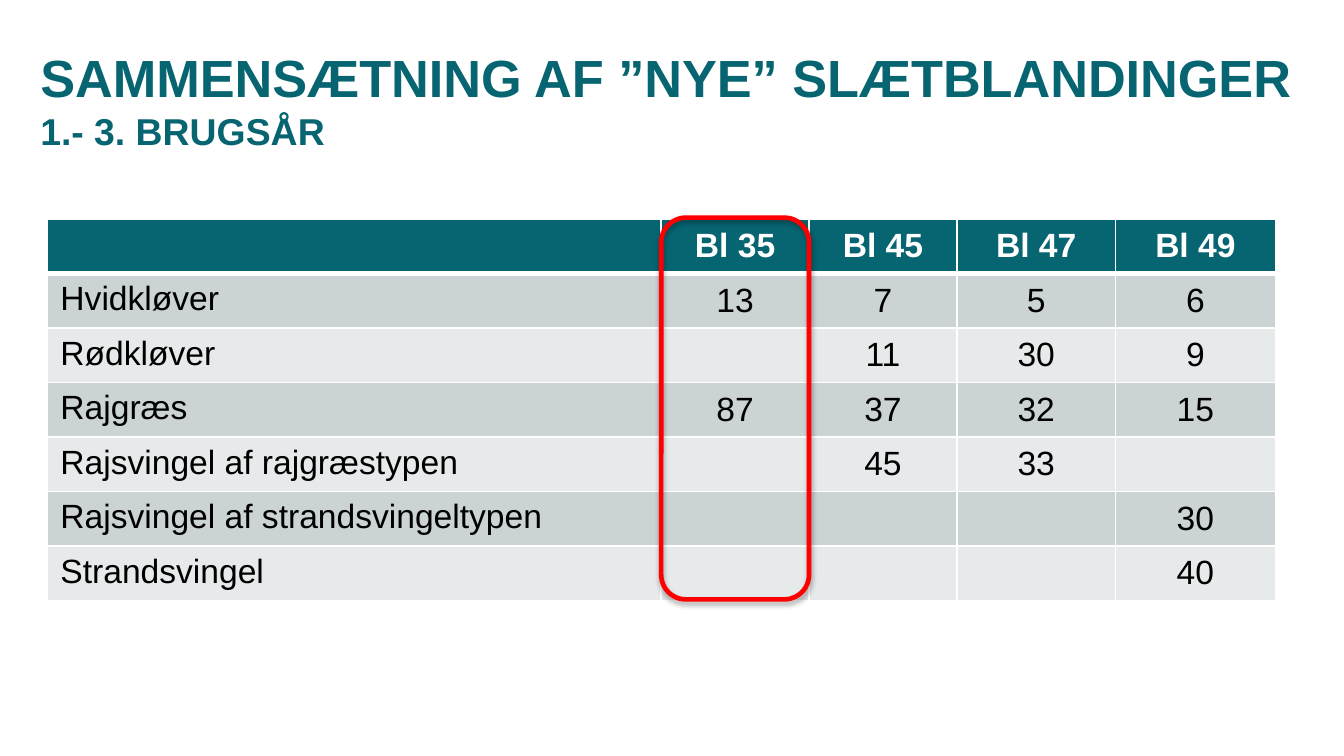
from lxml import etree
from pptx import Presentation
from pptx import util as u
from pptx.dml.color import RGBColor
from pptx.enum import shapes, text
from pptx.oxml.ns import qn

FONT = "Arial"
TEAL, WHITE, BLACK, RED = "076471", "FFFFFF", "000000", "FF0000"
BANDS = ("CCD3D5", "E7EAEB")
COLUMN_WIDTHS = (4.57, 1.1, 1.1, 1.18, 1.19)
ROW_HEIGHT = 2.84 / 7
MIXTURES = [
    ("", "Bl 35", "Bl 45", "Bl 47", "Bl 49"),
    ("Hvidkløver", "13", "7", "5", "6"),
    ("Rødkløver", "", "11", "30", "9"),
    ("Rajgræs", "87", "37", "32", "15"),
    ("Rajsvingel af rajgræstypen", "", "45", "33", ""),
    ("Rajsvingel af strandsvingeltypen", "", "", "", "30"),
    ("Strandsvingel", "", "", "", "40"),
]


def color(value):
    return RGBColor.from_string(value)


def format_font(font, size, value, bold):
    font.name = FONT
    font.size = u.Pt(size)
    font.bold = bold
    font.color.rgb = color(value)


def add_title(page, heading, subheading):
    title = page.shapes.title
    title.left, title.top = u.Inches(0.2), u.Inches(0.27)
    title.width, title.height = u.Inches(9.76), u.Inches(0.94)
    frame = title.text_frame
    frame.word_wrap = True
    frame.auto_size = text.MSO_AUTO_SIZE.NONE
    frame.vertical_anchor = text.MSO_ANCHOR.MIDDLE
    para = frame.paragraphs[0]
    para.text = f"{heading}\v{subheading}"
    para.alignment = text.PP_ALIGN.LEFT
    for span, size in zip(para.runs, (28, 20)):
        format_font(span.font, size, TEAL, True)


def set_borders(cell, top, bottom):
    """Draw white borders; top and bottom are widths in points."""
    properties = cell._tc.get_or_add_tcPr()
    for side, width in (("L", 1), ("R", 1), ("T", top), ("B", bottom)):
        line = etree.SubElement(properties, qn(f"a:ln{side}"), w=str(u.Pt(width)))
        fill = etree.SubElement(line, qn("a:solidFill"))
        etree.SubElement(fill, qn("a:srgbClr"), val=WHITE)


def fill_cell(cell, content, row, column):
    header = row == 0
    set_borders(cell, top=1, bottom=3 if header else 1)
    cell.fill.solid()
    cell.fill.fore_color.rgb = color(TEAL if header else BANDS[(row - 1) % 2])
    para = cell.text_frame.paragraphs[0]
    para.text = content
    for span in para.runs:
        format_font(span.font, 18, WHITE if header else BLACK, header)
    if header or column > 0:
        para.alignment = text.PP_ALIGN.CENTER
        cell.vertical_anchor = text.MSO_ANCHOR.MIDDLE


def add_mixture_table(page, left, top):
    frame = page.shapes.add_table(
        len(MIXTURES), len(COLUMN_WIDTHS), u.Inches(left), u.Inches(top),
        u.Inches(sum(COLUMN_WIDTHS)), u.Inches(ROW_HEIGHT * len(MIXTURES)))
    table = frame.table
    for column, width in zip(table.columns, COLUMN_WIDTHS):
        column.width = u.Inches(width)
    for row, contents in enumerate(MIXTURES):
        table.rows[row].height = u.Inches(ROW_HEIGHT)
        for column, content in enumerate(contents):
            fill_cell(table.cell(row, column), content, row, column)


def add_soft_shadow(shape):
    shape.shadow.inherit = False
    effects = shape._element.spPr.find(qn("a:effectLst"))
    shadow = etree.SubElement(
        effects, qn("a:outerShdw"), blurRad=str(u.Pt(3.1)),
        dist=str(u.Pt(1.8)), dir=str(90 * 60000), rotWithShape="0")
    tint = etree.SubElement(shadow, qn("a:srgbClr"), val=BLACK)
    etree.SubElement(tint, qn("a:alpha"), val="35000")


def add_highlight(page, left, top, width, height):
    box = page.shapes.add_shape(
        shapes.MSO_SHAPE.ROUNDED_RECTANGLE, u.Inches(left), u.Inches(top),
        u.Inches(width), u.Inches(height))
    box.fill.background()
    box.line.color.rgb = color(RED)
    box.line.width = u.Pt(2.5)
    add_soft_shadow(box)


def main():
    deck = Presentation()
    deck.slide_width = u.Inches(10)
    deck.slide_height = u.Inches(10 * 9 / 16)
    page = deck.slides.add_slide(deck.slide_layouts.get_by_name("Title Only"))
    add_title(page, "SAMMENSÆTNING AF ”NYE” SLÆTBLANDINGER", "1.- 3. BRUGSÅR")
    add_mixture_table(page, 0.35, 1.63)
    add_highlight(page, 4.92, 1.62, COLUMN_WIDTHS[1], 2.84)
    deck.save("out.pptx")


if __name__ == "__main__":
    main()
